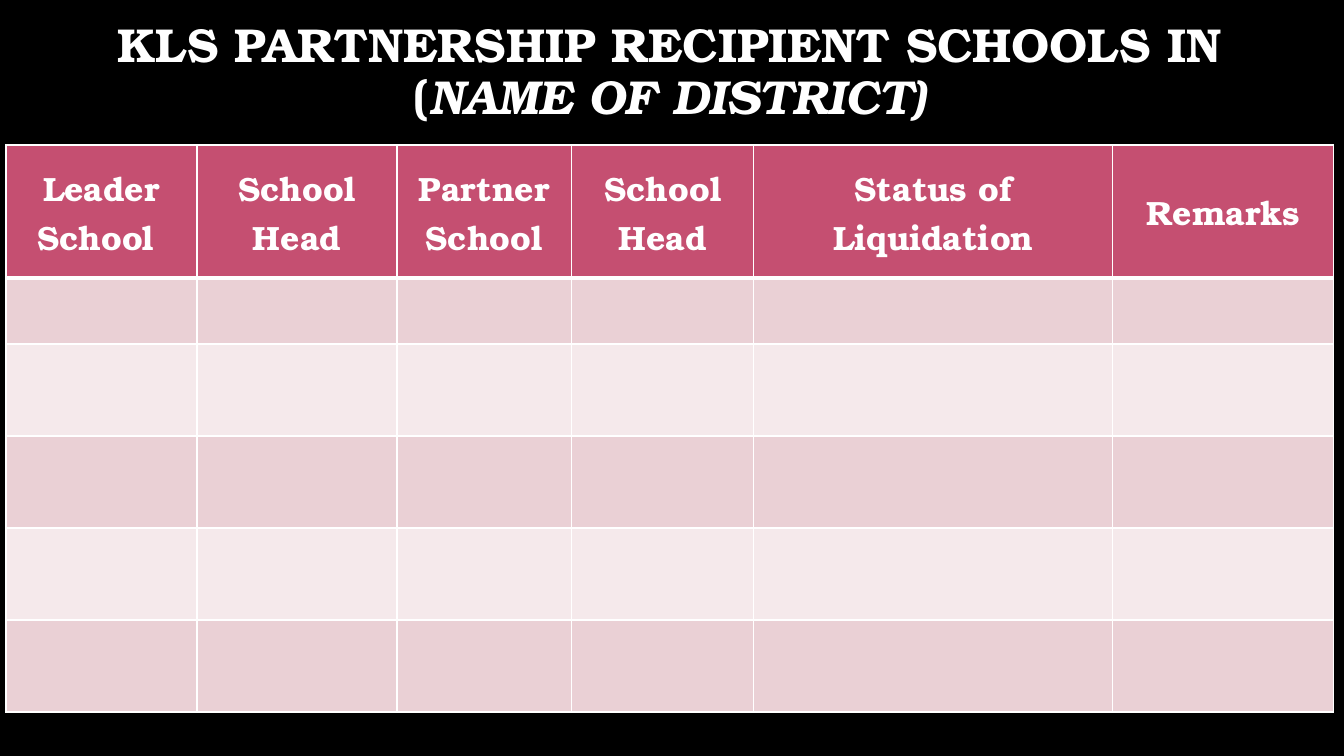
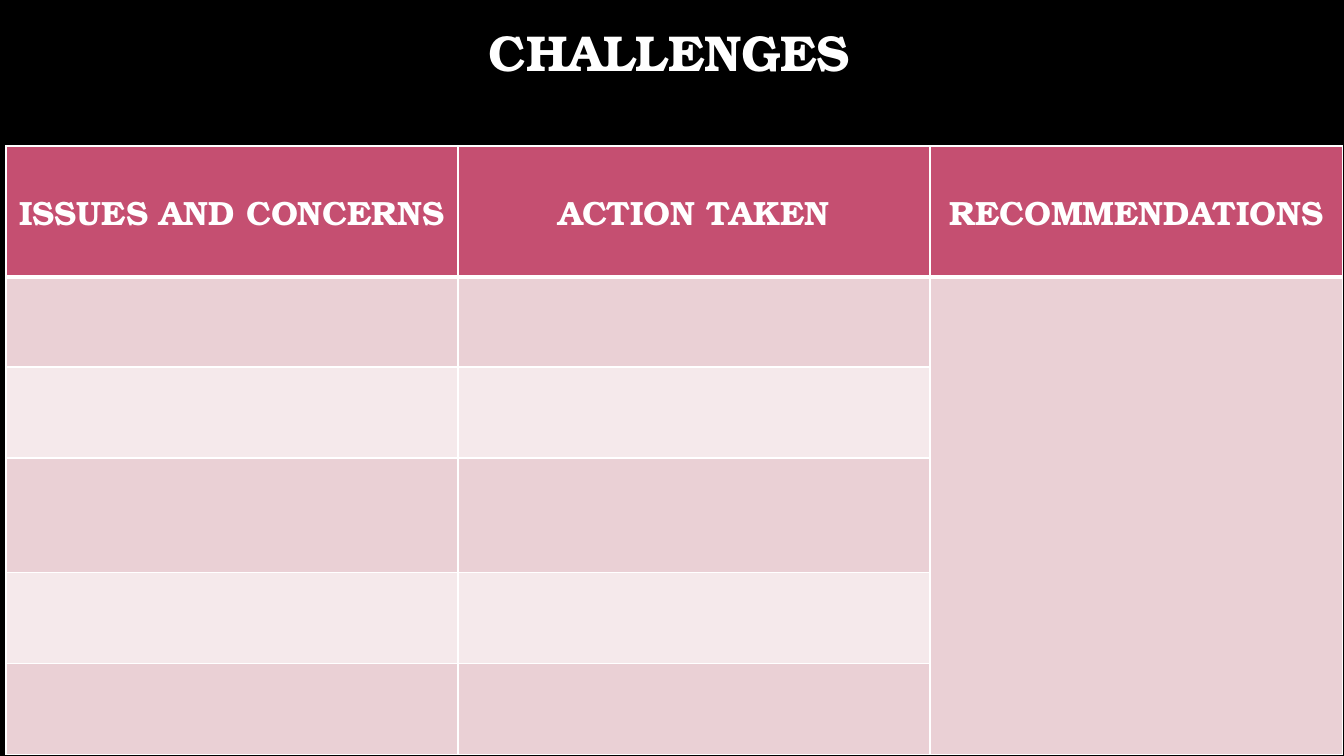
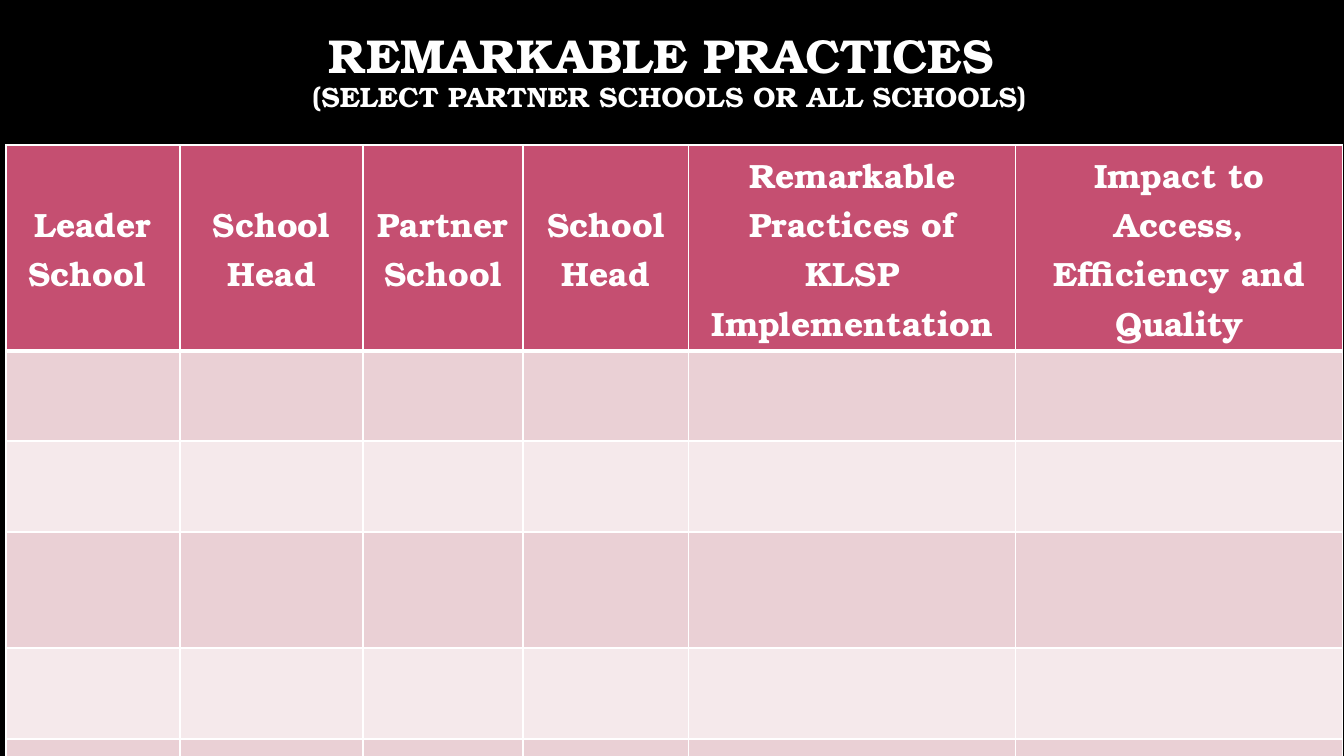
from lxml import etree
from pptx import Presentation, util as u
from pptx.dml.color import RGBColor
from pptx.enum import text
from pptx.oxml.ns import qn

PX = 914400 / 100.8
FONT = "TeX Gyre Bonum"
BLACK, WHITE, ROSE = "000000", "FFFFFF", "C54F71"
BANDS = ["EAD0D5", "F5E9EB"]
INSET = 5

# Title lines hold runs of (words, size, italic); "lift" raises the title.
SLIDES = [
    {"title": [[("KLS PARTNERSHIP RECIPIENT SCHOOLS IN (", 34, False),
                ("NAME OF DISTRICT)", 34, True)]],
     "lift": 0, "top": 145,
     "columns": [("Leader School ", 191), ("School Head", 200), ("Partner School", 175),
                 ("School Head", 182), ("Status of Liquidation", 359), ("Remarks", 221)],
     "rows": [133, 66, 92, 92, 92, 92], "merged_column": None},
    {"title": [[("CHALLENGES", 36, False)]],
     "lift": 18, "top": 146,
     "columns": [("ISSUES AND CONCERNS", 452), ("ACTION TAKEN", 472), ("RECOMMENDATIONS", 413)],
     "rows": [131, 90, 91, 115, 91, 91], "merged_column": 2},
    {"title": [[("REMARKABLE PRACTICES ", 34, False)],
               [("(SELECT PARTNER SCHOOLS OR ALL SCHOOLS)", 20, False)]],
     "lift": 0, "top": 145,
     "columns": [("Leader School ", 174), ("School Head", 183), ("Partner School", 160),
                 ("School Head", 166), ("Remarkable Practices of KLSP Implementation", 327),
                 ("Impact to Access, Efficiency and Quality", 327)],
     "rows": [206, 90, 91, 116, 91, 91], "merged_column": None},
]


def paint(color_format, color):
    color_format.rgb = RGBColor.from_string(color)


def add_run(paragraph, words, size, italic=False):
    """Add white bold words in the deck's font."""
    run = paragraph.add_run()
    run.text = words
    run.font.name = FONT
    run.font.size = u.Pt(size)
    run.font.bold = True
    run.font.italic = italic
    paint(run.font.color, WHITE)


deck = Presentation()
deck.slide_width, deck.slide_height = round(1344 * PX), round(756 * PX)

for content in SLIDES:
    slide = deck.slides.add_slide(deck.slide_layouts[6])
    slide.background.fill.solid()
    paint(slide.background.fill.fore_color, BLACK)

    title = slide.shapes.add_textbox(
        *(round(n * PX) for n in (99, 0, 1141, 146))).text_frame
    title.word_wrap = True
    title.vertical_anchor = text.MSO_ANCHOR.MIDDLE
    title.margin_bottom = round((INSET + 2 * content["lift"]) * PX)
    heading = title.paragraphs[0]
    heading.alignment = text.PP_ALIGN.CENTER
    heading.line_spacing = 0.9
    for number, line in enumerate(content["title"]):
        if number:
            heading.add_line_break()
        for words, size, italic in line:
            add_run(heading, words, size, italic)

    columns, rows = content["columns"], content["rows"]
    width = sum(w for _, w in columns)
    table = slide.shapes.add_table(
        len(rows), len(columns),
        *(round(n * PX) for n in (6, content["top"], width, sum(rows)))).table
    for column, (_, column_width) in zip(table.columns, columns):
        column.width = round(column_width * PX)

    for r, height in enumerate(rows):
        table.rows[r].height = round(height * PX)
        for c, (label, _) in enumerate(columns):
            cell = table.cell(r, c)
            cell.fill.solid()
            paint(cell.fill.fore_color, BANDS[(r - 1) % 2] if r else ROSE)
            if r == 0:
                cell.vertical_anchor = text.MSO_ANCHOR.MIDDLE
                header = cell.text_frame.paragraphs[0]
                header.alignment = text.PP_ALIGN.CENTER
                add_run(header, label, 24)

            # The rule between header and body is three points thick.
            borders = {"a:lnL": 1, "a:lnR": 1,
                       "a:lnT": 3 if r == 1 else 1, "a:lnB": 3 if r == 0 else 1}
            properties = cell._tc.get_or_add_tcPr()
            for place, (side, points) in enumerate(borders.items()):
                border = etree.Element(qn(side), w=str(u.Pt(points)))
                fill = etree.SubElement(border, qn("a:solidFill"))
                etree.SubElement(fill, qn("a:srgbClr"), val=WHITE)
                properties.insert(place, border)

    merged = content["merged_column"]
    if merged is not None:
        table.cell(1, merged).merge(table.cell(len(rows) - 1, merged))

deck.save("out.pptx")
